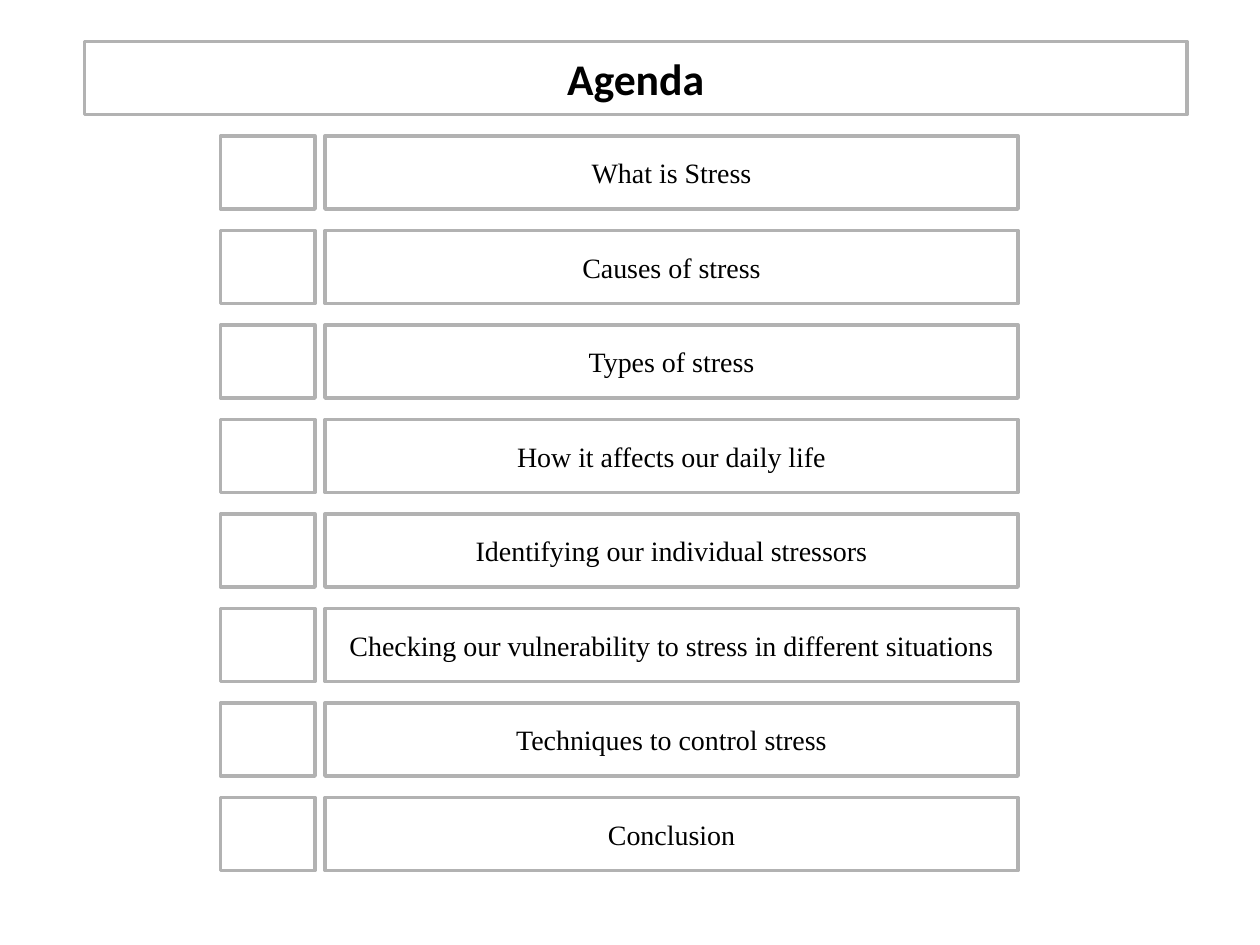
from pptx import Presentation
from pptx.dml.color import RGBColor
from pptx.enum import shapes, text
from pptx.util import Inches, Pt

TITLE = "Agenda"
TOPICS = [
    "What is Stress",
    "Causes of stress",
    "Types of stress",
    "How it affects our daily life",
    "Identifying our individual stressors",
    "Checking our vulnerability to stress in different situations",
    "Techniques to control stress",
    "Conclusion",
]

WHITE = RGBColor(0xFF, 0xFF, 0xFF)
GRAY = RGBColor(0xB2, 0xB2, 0xB2)
BLACK = RGBColor(0, 0, 0)

BOX_HEIGHT = 0.58
FIRST_TOP = 1.08
ROW_STEP = 0.75


def add_box(slide, left, top, width):
    shape = slide.shapes.add_shape(
        shapes.MSO_SHAPE.RECTANGLE,
        Inches(left), Inches(top), Inches(width), Inches(BOX_HEIGHT),
    )
    shape.shadow.inherit = False
    shape.fill.solid()
    shape.fill.fore_color.rgb = WHITE
    shape.line.color.rgb = GRAY
    shape.line.width = Pt(2)
    return shape


def write_label(shape, label, font_name, size, bold=False):
    frame = shape.text_frame
    frame.word_wrap = True
    frame.vertical_anchor = text.MSO_ANCHOR.MIDDLE
    paragraph = frame.paragraphs[0]
    paragraph.text = label
    paragraph.alignment = text.PP_ALIGN.CENTER
    paragraph.font.name = font_name
    paragraph.font.size = Pt(size)
    paragraph.font.bold = bold
    paragraph.font.color.rgb = BLACK


def main():
    presentation = Presentation()
    presentation.slide_width = Inches(10)
    presentation.slide_height = Inches(7.5)
    slide = presentation.slides.add_slide(presentation.slide_layouts[6])

    title_box = add_box(slide, 0.67, 0.33, 8.75)
    write_label(title_box, TITLE, "Calibri", 25, bold=True)

    for row, topic in enumerate(TOPICS):
        top = FIRST_TOP + row * ROW_STEP
        add_box(slide, 1.75, top, 0.75)
        topic_box = add_box(slide, 2.58, top, 5.5)
        write_label(topic_box, topic, "Times New Roman", 16)

    presentation.save("out.pptx")


if __name__ == "__main__":
    main()
